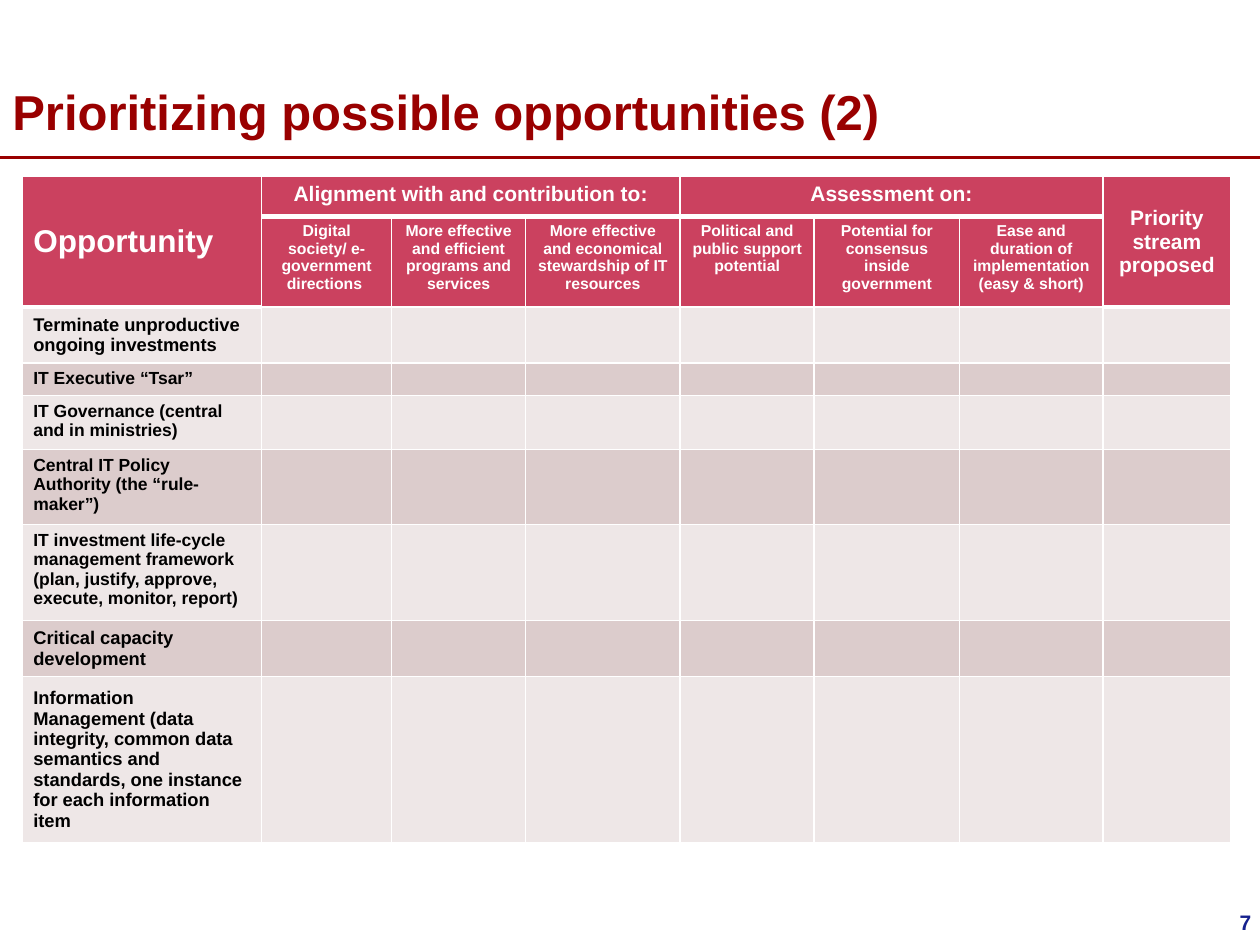
from lxml.etree import SubElement
from pptx import Presentation
from pptx.dml.color import RGBColor
from pptx.enum.shapes import MSO_CONNECTOR
from pptx.enum.text import MSO_ANCHOR as Anchor, PP_ALIGN as Align
from pptx.oxml.ns import qn
from pptx.util import Pt

WHITE, BLACK, RED, NAVY = "FFFFFF", "000000", "990000", "16218E"
HEADER_FILL, BANDS = "CB415F", ("EEE7E7", "DCCCCC")

TITLE = "Prioritizing possible opportunities (2)"
PAGE_NUMBER = "7"
# text, first row, first column, last row, last column, size, alignment, anchor
GROUP_HEADERS = [
    ("Opportunity", 0, 0, 1, 0, 18, Align.LEFT, Anchor.MIDDLE),
    ("Alignment with and contribution to:", 0, 1, 0, 3, 12, Align.CENTER, Anchor.TOP),
    ("Assessment on:", 0, 4, 0, 6, 12, Align.CENTER, Anchor.TOP),
    ("Priority stream proposed", 0, 7, 1, 7, 12, Align.CENTER, Anchor.MIDDLE),
]
CRITERIA = [
    "Digital society/ e-government directions ",
    "More effective and efficient programs and services",
    "More effective and economical stewardship of IT resources",
    "Political and public support potential",
    "Potential for consensus inside government",
    "Ease and duration of implementation (easy & short)",
]
# text, size, anchor
OPPORTUNITIES = [
    ("Terminate unproductive ongoing investments", 10.5, Anchor.MIDDLE),
    ("IT Executive “Tsar”", 10, Anchor.TOP),
    ("IT Governance (central and in ministries)", 10, Anchor.TOP),
    ("Central IT Policy Authority (the “rule-maker”)", 10, Anchor.TOP),
    ("IT investment life-cycle management framework "
     "(plan, justify, approve, execute, monitor, report)", 10, Anchor.TOP),
    ("Critical capacity development", 10.5, Anchor.MIDDLE),
    ("Information Management (data integrity, common data semantics and "
     "standards, one instance for each information item", 10.5, Anchor.MIDDLE),
]
COLUMN_WIDTHS = [137, 74.3, 76.5, 88.4, 76.6, 83.1, 81.9, 73.2]
ROW_HEIGHTS = [22.6, 51.8, 30.8, 18.3, 29.3, 41, 52, 30.4, 88.6]


def color(value):
    return RGBColor.from_string(value)


def write(frame, text, size, ink, align=Align.LEFT, anchor=Anchor.TOP):
    frame.word_wrap = True
    frame.vertical_anchor = anchor
    para = frame.paragraphs[0]
    para.alignment = align
    span = para.add_run()
    span.text = text
    font = span.font
    font.name, font.size, font.bold = "Arial", Pt(size), True
    font.color.rgb = color(ink)


def style_cell(cell, fill, bottom=1):
    """Set white borders, fill and margins of a cell."""
    properties = cell._tc.get_or_add_tcPr()
    for side, width in (("L", 1), ("R", 1), ("T", 1), ("B", bottom)):
        line = SubElement(properties, qn(f"a:ln{side}"), w=str(Pt(width)))
        solid = SubElement(line, qn("a:solidFill"))
        SubElement(solid, qn("a:srgbClr"), val=WHITE)
    cell.fill.solid()
    cell.fill.fore_color.rgb = color(fill)
    cell.margin_left = cell.margin_right = Pt(6.6)
    cell.margin_top = cell.margin_bottom = Pt(3.4)


def fill_cell(cell, text, size, ink, align=Align.LEFT, anchor=Anchor.TOP):
    write(cell.text_frame, text, size, ink, align)
    cell.vertical_anchor = anchor


def add_text(page, left, top, width, height, text, **style):
    box = page.shapes.add_textbox(Pt(left), Pt(top), Pt(width), Pt(height))
    write(box.text_frame, text, **style)


def add_rule(page, y):
    rule = page.shapes.add_connector(MSO_CONNECTOR.STRAIGHT, 0, Pt(y), Pt(720), Pt(y))
    rule.line.color.rgb = color(RED)
    rule.line.width = Pt(2.25)
    SubElement(rule._element.spPr, qn("a:effectLst"))


def add_priority_table(page):
    table = page.shapes.add_table(
        len(ROW_HEIGHTS), len(COLUMN_WIDTHS), Pt(12.5), Pt(101),
        Pt(sum(COLUMN_WIDTHS)), Pt(sum(ROW_HEIGHTS))).table
    for column, width in zip(table.columns, COLUMN_WIDTHS):
        column.width = Pt(width)
    for row, height in zip(table.rows, ROW_HEIGHTS):
        row.height = Pt(height)

    last = len(COLUMN_WIDTHS) - 1
    for r in range(len(ROW_HEIGHTS)):
        for c in range(len(COLUMN_WIDTHS)):
            thick = r == 0 or (r == 1 and c in (0, last))
            fill = HEADER_FILL if r < 2 else BANDS[r % 2]
            style_cell(table.cell(r, c), fill, bottom=3 if thick else 1)
            if r > 1 and c > 0:  # keeps empty cells from stretching their row
                para = table.cell(r, c).text_frame.paragraphs[0]
                SubElement(para._p, qn("a:endParaRPr"), sz="1000")

    for text, top, left, bottom, right, size, align, anchor in GROUP_HEADERS:
        table.cell(top, left).merge(table.cell(bottom, right))
        fill_cell(table.cell(top, left), text, size, WHITE, align, anchor)
    for c, text in enumerate(CRITERIA, 1):
        fill_cell(table.cell(1, c), text, 9, WHITE, Align.CENTER)
    for r, (text, size, anchor) in enumerate(OPPORTUNITIES, 2):
        fill_cell(table.cell(r, 0), text, size, BLACK, anchor=anchor)


def main():
    deck = Presentation()
    deck.slide_width, deck.slide_height = Pt(720), Pt(540)
    page = deck.slides.add_slide(deck.slide_layouts[6])
    add_rule(page, 90)
    add_text(page, 0, 0, 588, 84, TITLE, size=28, ink=RED, anchor=Anchor.BOTTOM)
    add_priority_table(page)
    add_text(page, 554, 516, 168, 24, PAGE_NUMBER, size=12, ink=NAVY, align=Align.RIGHT)
    deck.save("out.pptx")


if __name__ == "__main__":
    main()
